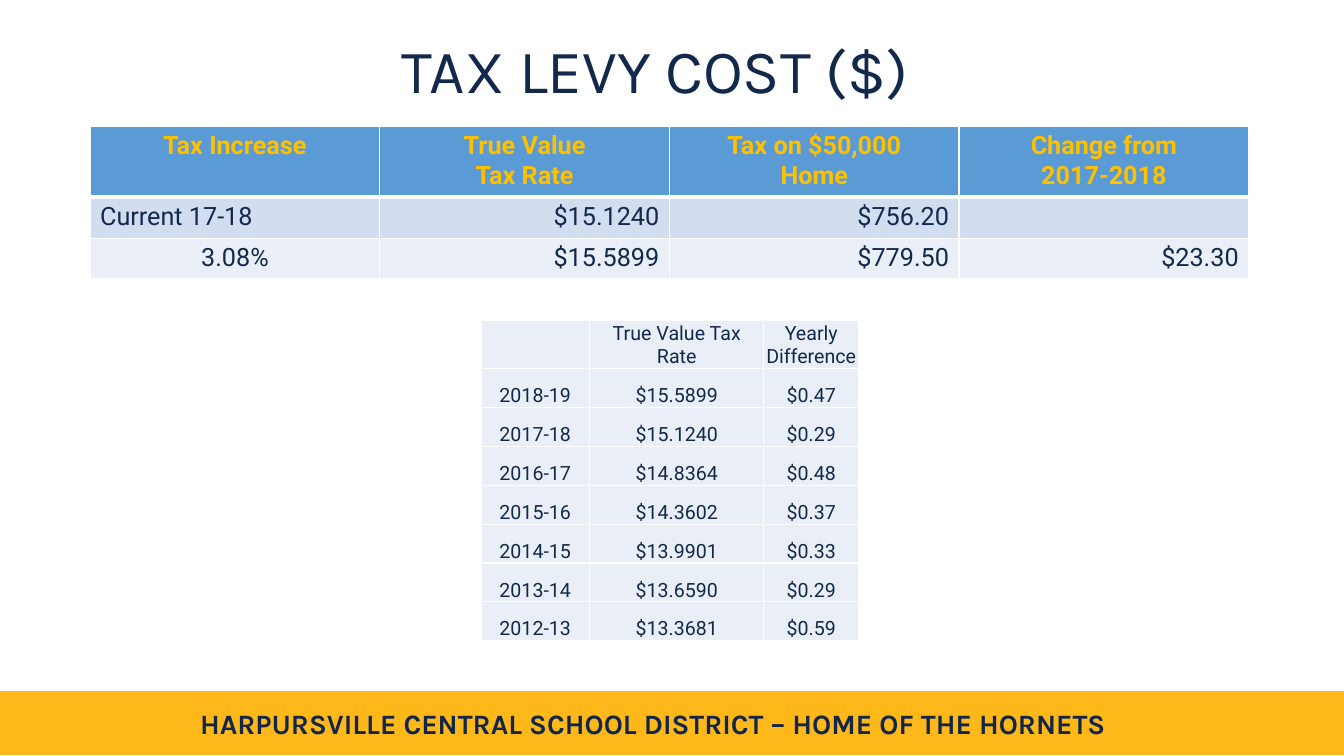
from dataclasses import dataclass

from lxml.etree import SubElement
from pptx import Presentation
from pptx.dml.color import RGBColor
from pptx.enum.shapes import MSO_SHAPE
from pptx.enum.text import MSO_ANCHOR as Anchor, PP_ALIGN as Align
from pptx.oxml.ns import qn
from pptx.util import Cm, Pt


@dataclass(frozen=True)
class Theme:
    navy: str = "13294B"
    footer_navy: str = "132649"
    gold: str = "FFB819"
    header_gold: str = "FFC000"
    blue: str = "5B9BD5"
    band: str = "D2DEEF"
    pale: str = "EAEFF7"
    white: str = "FFFFFF"
    heading_font: str = "Karla"
    body_font: str = "Roboto"
    title_size: int = 44
    footer_size: int = 20
    levy_size: int = 18
    history_size: int = 14


THEME = Theme()

LEVY_ROWS = [
    ["Tax Increase", "True Value\nTax Rate", "Tax on $50,000\nHome", "Change from\n2017-2018"],
    ["Current 17-18", "$15.1240", "$756.20", ""],
    ["3.08%", "$15.5899", "$779.50", "$23.30"],
]
HISTORY_ROWS = [
    ["", "True Value Tax Rate", "Yearly Difference"],
    ["2018-19", "$15.5899", "$0.47"],
    ["2017-18", "$15.1240", "$0.29"],
    ["2016-17", "$14.8364", "$0.48"],
    ["2015-16", "$14.3602", "$0.37"],
    ["2014-15", "$13.9901", "$0.33"],
    ["2013-14", "$13.6590", "$0.29"],
    ["2012-13", "$13.3681", "$0.59"],
]


def write_text(frame, text, font, size, color, bold=False, align=Align.CENTER):
    """Write one paragraph per line of text, all in the same style."""
    frame.text = text
    for paragraph in frame.paragraphs:
        paragraph.alignment = align
        paragraph.font.name = font
        paragraph.font.size = Pt(size)
        paragraph.font.bold = bold
        paragraph.font.color.rgb = RGBColor.from_string(color)


def add_rectangle(slide, left, top, width, height, color):
    shape = slide.shapes.add_shape(
        MSO_SHAPE.RECTANGLE, Cm(left), Cm(top), Cm(width), Cm(height))
    shape.shadow.inherit = False
    shape.fill.solid()
    shape.fill.fore_color.rgb = RGBColor.from_string(color)
    shape.line.fill.background()
    return shape


def add_footer(slide):
    band = add_rectangle(slide, 0, 17.42, 33.86, 1.6, THEME.gold)
    band.line.color.rgb = RGBColor.from_string(THEME.gold)
    band.line.width = Pt(1)
    box = slide.shapes.add_textbox(Cm(4.47), Cm(17.68), Cm(23.98), Cm(1.11))
    box.text_frame.word_wrap = True
    write_text(box.text_frame, "HARPURSVILLE CENTRAL SCHOOL DISTRICT – HOME OF THE HORNETS",
               THEME.heading_font, THEME.footer_size, THEME.footer_navy, bold=True)


def add_title(slide):
    title = add_rectangle(slide, 1.91, 0.53, 29.21, 2.64, THEME.white)
    title.text_frame.vertical_anchor = Anchor.MIDDLE
    write_text(title.text_frame, "TAX LEVY COST ($)",
               THEME.heading_font, THEME.title_size, THEME.navy)
    title.text_frame.paragraphs[0].line_spacing = 0.9


def set_borders(cell, top=1, bottom=1):
    """Draw white cell edges; top and bottom are widths in points."""
    properties = cell._tc.get_or_add_tcPr()
    edges = {"a:lnL": 1, "a:lnR": 1, "a:lnT": top, "a:lnB": bottom}
    for position, (tag, width) in enumerate(edges.items()):
        edge = SubElement(properties, qn(tag), w=str(Pt(width)))
        fill = SubElement(edge, qn("a:solidFill"))
        SubElement(fill, qn("a:srgbClr"), val=THEME.white)
        properties.insert(position, edge)


def add_table(slide, rows, left, top, widths, header_height, row_height, style_cell):
    """Add a table and hand each cell with its text and place to style_cell."""
    heights = [header_height] + [row_height] * (len(rows) - 1)
    table = slide.shapes.add_table(
        len(rows), len(widths), Cm(left), Cm(top), Cm(sum(widths)), Cm(sum(heights))).table
    table.first_row = table.horz_banding = False
    for column, width in zip(table.columns, widths):
        column.width = Cm(width)
    for row_index, (values, height) in enumerate(zip(rows, heights)):
        table.rows[row_index].height = Cm(height)
        for column_index, text in enumerate(values):
            cell = table.cell(row_index, column_index)
            cell.fill.solid()
            style_cell(cell, text, row_index, column_index)


def style_levy_cell(cell, text, row, column):
    is_header = row == 0
    fill = (THEME.blue, THEME.band, THEME.pale)[row]
    cell.fill.fore_color.rgb = RGBColor.from_string(fill)
    set_borders(cell, top=3 if row == 1 else 1, bottom=3 if is_header else 1)
    if is_header:
        align = Align.CENTER
    elif column == 0:
        align = Align.LEFT if row == 1 else Align.CENTER
    else:
        align = Align.RIGHT
    write_text(cell.text_frame, text, THEME.body_font, THEME.levy_size,
               THEME.header_gold if is_header else THEME.navy, is_header, align)


def style_history_cell(cell, text, row, column):
    cell.fill.fore_color.rgb = RGBColor.from_string(THEME.pale)
    set_borders(cell)
    cell.vertical_anchor = Anchor.BOTTOM
    cell.margin_left = cell.margin_right = cell.margin_top = Cm(0.02)
    cell.margin_bottom = 0
    write_text(cell.text_frame, text, THEME.body_font, THEME.history_size, THEME.navy)


def main():
    presentation = Presentation()
    presentation.slide_width = Cm(33.87)
    presentation.slide_height = Cm(19.05)
    slide = presentation.slides.add_slide(presentation.slide_layouts[6])
    add_footer(slide)
    add_title(slide)
    add_table(slide, LEVY_ROWS, 2.27, 3.19, [7.3] * 4, 1.78, 1.03, style_levy_cell)
    add_table(slide, HISTORY_ROWS, 12.12, 8.08, [2.74, 4.39, 2.39], 1.2, 0.98,
              style_history_cell)
    presentation.save("out.pptx")


if __name__ == "__main__":
    main()
